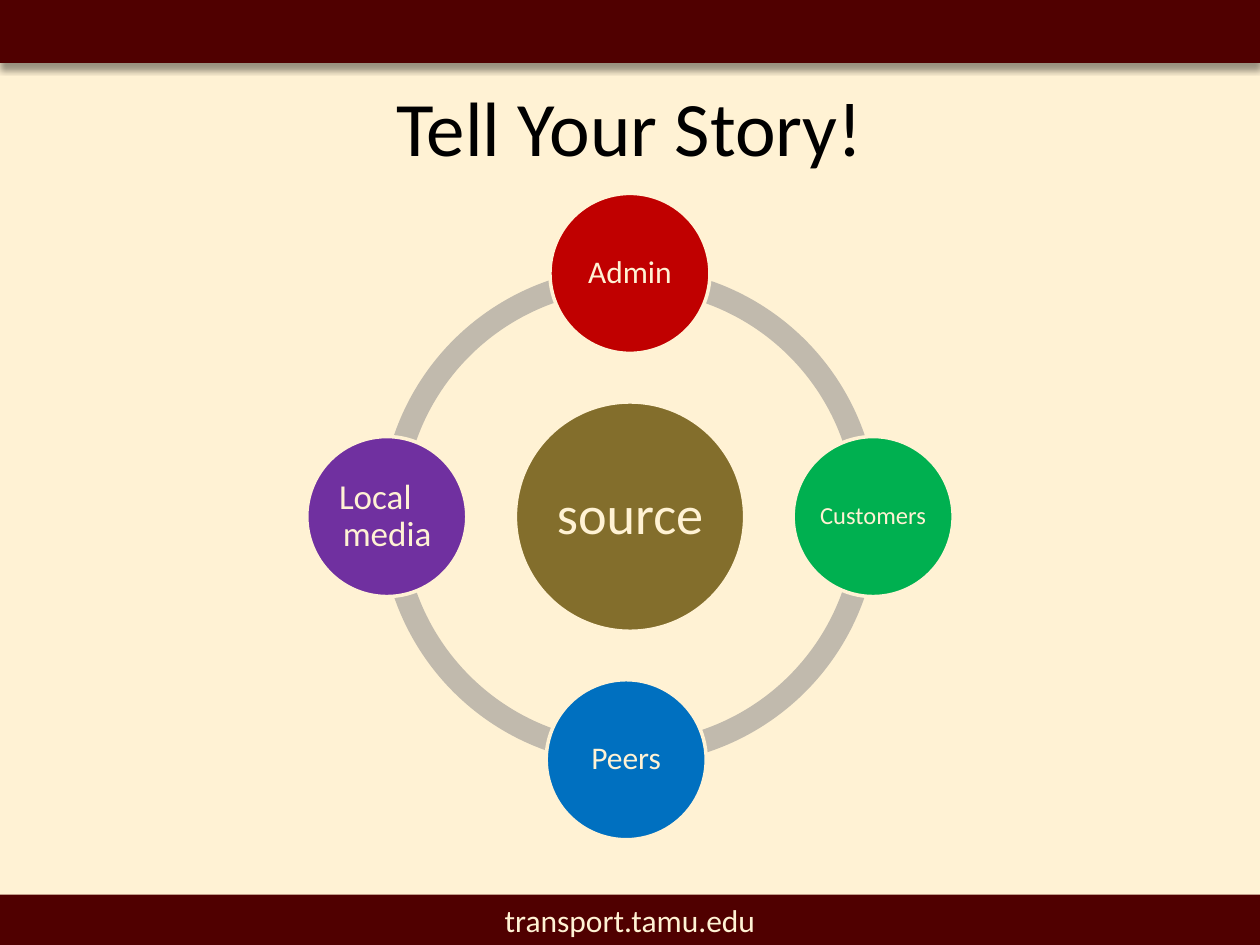
from dataclasses import dataclass

from lxml import etree
from pptx import Presentation
from pptx.dml.color import RGBColor
from pptx.enum import shapes, text
from pptx.oxml import ns
from pptx.util import Inches, Pt

CREAM = RGBColor(0xFF, 0xF2, 0xD4)
MAROON = RGBColor(0x50, 0x00, 0x00)
TAUPE = RGBColor(0xC1, 0xBA, 0xAD)
OLIVE = RGBColor(0x83, 0x6E, 0x2C)
RED = RGBColor(0xC0, 0x00, 0x00)
GREEN = RGBColor(0x00, 0xB0, 0x50)
BLUE = RGBColor(0x00, 0x70, 0xC0)
PURPLE = RGBColor(0x70, 0x30, 0xA0)
BLACK = RGBColor(0x00, 0x00, 0x00)

RING_BOX = (3.02, 2.12, 3.95, 3.95)
RING_THICKNESS = 0.046
# Start and end of each arc, in units of 100000/60000 degrees
RING_ARCS = [(108, 162), (54.53, 108.034), (215.966, 54.53), (162, 0)]


@dataclass
class Circle:
    label: str
    color: RGBColor
    center_x: float
    center_y: float
    diameter: float = 1.27
    size: int = 18
    inset: float = 0.03


LOCAL_MEDIA = Circle("Local media", PURPLE, 3.07, 4.1, size=20)
CIRCLES = [
    Circle("source", OLIVE, 5, 4.1, diameter=1.82, size=31, inset=0.04),
    Circle("Admin", RED, 5, 2.17),
    Circle("Customers", GREEN, 6.93, 4.1, size=14, inset=0.02),
    Circle("Peers", BLUE, 4.97, 6.03),
    LOCAL_MEDIA,
]


def add_filled(slide, kind, box, color):
    """Add a preset shape with a plain fill, no line and no shadow."""
    shape = slide.shapes.add_shape(kind, *map(Inches, box))
    shape.shadow.inherit = False
    shape.fill.solid()
    shape.fill.fore_color.rgb = color
    shape.line.fill.background()
    return shape


def write(shape, words: str, size: int, color: RGBColor):
    """Write one centred paragraph in the middle of a shape and return it."""
    frame = shape.text_frame
    frame.word_wrap = True
    frame.vertical_anchor = text.MSO_ANCHOR.MIDDLE
    paragraph = frame.paragraphs[0]
    paragraph.alignment = text.PP_ALIGN.CENTER
    run = paragraph.add_run()
    run.text = words
    for name, value in {"name": "Calibri", "size": Pt(size)}.items():
        setattr(run.font, name, value)
    run.font.color.rgb = color
    return paragraph


def add_drop_shadow(shape) -> None:
    effects = shape._element.spPr.find(ns.qn("a:effectLst"))
    shadow = etree.SubElement(
        effects, ns.qn("a:outerShdw"), blurRad=str(Pt(4)), dist=str(Pt(3)),
        dir="5400000", algn="t", rotWithShape="0")
    color = etree.SubElement(shadow, ns.qn("a:srgbClr"), val="000000")
    etree.SubElement(color, ns.qn("a:alpha"), val="40000")


def add_circle(slide, circle: Circle):
    """Draw a labelled circle and return the paragraph of its label."""
    radius = circle.diameter / 2
    box = (circle.center_x - radius, circle.center_y - radius,
           circle.diameter, circle.diameter)
    shape = add_filled(slide, shapes.MSO_SHAPE.OVAL, box, circle.color)
    shape.line.color.rgb = CREAM
    shape.line.width = Pt(2)
    for side in ("left", "top", "right", "bottom"):
        setattr(shape.text_frame, f"margin_{side}", Inches(circle.inset))
    paragraph = write(shape, circle.label, circle.size, CREAM)
    paragraph.line_spacing = 0.9
    return paragraph


def stagger_lines(paragraph) -> None:
    """Align left, with the second line slightly further in than the first."""
    paragraph.alignment = text.PP_ALIGN.LEFT
    properties = paragraph._p.get_or_add_pPr()
    properties.set("marL", str(Inches(0.07)))
    properties.set("indent", str(Inches(-0.03)))


def main() -> None:
    presentation = Presentation()
    presentation.slide_width = Inches(10)
    presentation.slide_height = Inches(7.5)
    slide = presentation.slides.add_slide(presentation.slide_layouts[6])
    slide.background.fill.solid()
    slide.background.fill.fore_color.rgb = CREAM

    rectangle = shapes.MSO_SHAPE.RECTANGLE
    header = add_filled(slide, rectangle, (0, 0, 10, 0.5), MAROON)
    add_drop_shadow(header)
    footer = add_filled(slide, rectangle, (0, 7.1, 10, 0.4), MAROON)
    write(footer, "transport.tamu.edu", 18, CREAM)

    for start, end in RING_ARCS:
        arc = add_filled(slide, shapes.MSO_SHAPE.BLOCK_ARC, RING_BOX, TAUPE)
        for index, value in enumerate((start, end, RING_THICKNESS)):
            arc.adjustments[index] = value

    for circle in CIRCLES:
        label = add_circle(slide, circle)
        if circle is LOCAL_MEDIA:
            stagger_lines(label)

    title = slide.shapes.add_textbox(*map(Inches, (0.5, 0.58, 9, 0.83)))
    write(title, "Tell Your Story!", 44, BLACK)

    presentation.save("out.pptx")


if __name__ == "__main__":
    main()
